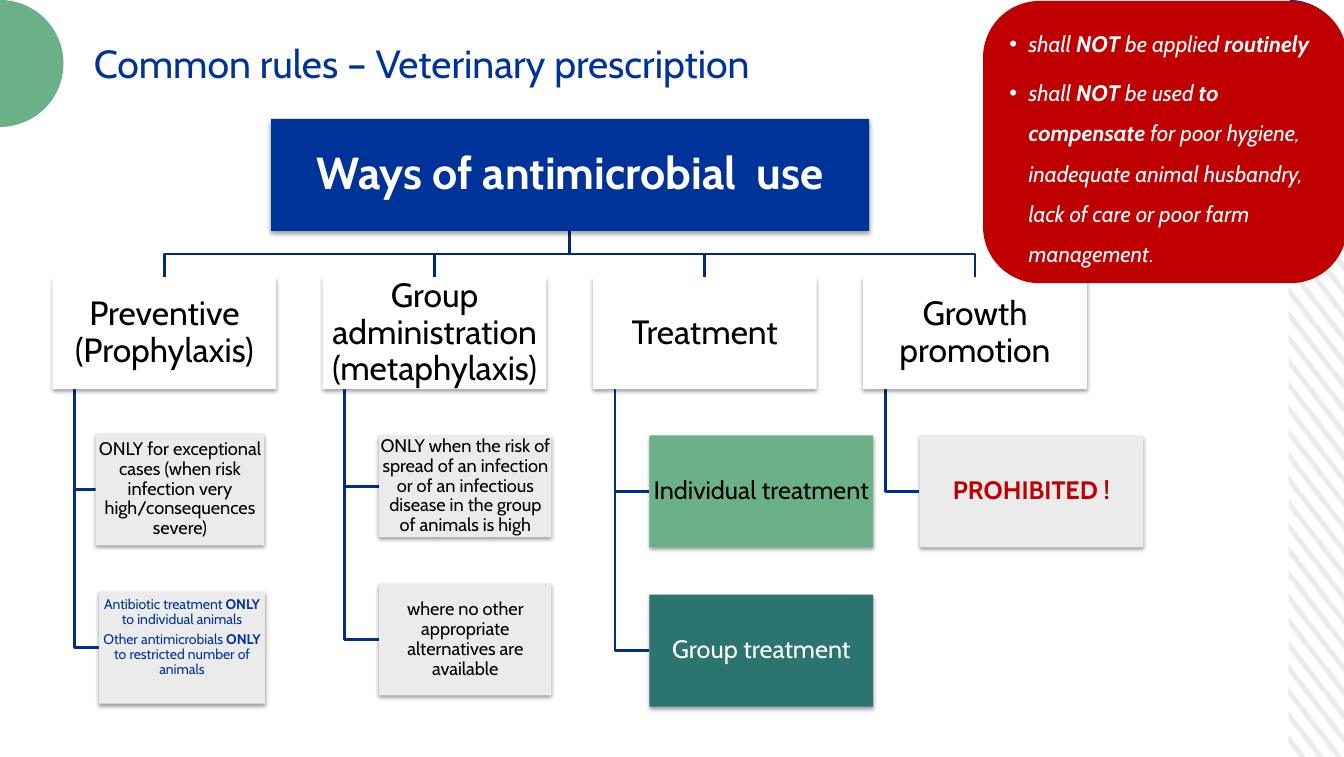
from dataclasses import dataclass
from math import cos, radians, sin

from lxml.etree import SubElement
from pptx import Presentation
from pptx.dml.color import RGBColor
from pptx.enum.shapes import MSO_SHAPE
from pptx.enum.text import MSO_ANCHOR, PP_ALIGN
from pptx.oxml.ns import qn
from pptx.util import Pt

PX = 9144  # EMU; 100 px to the inch
WIDTH, HEIGHT = 1333, 751


@dataclass(frozen=True)
class Theme:
    font: str = "Cabin"
    bullet_font: str = "Arial"
    blue: str = "003399"
    bus: str = "00297B"
    branch: str = "002E8B"
    green: str = "6BB188"
    teal: str = "2C7470"
    red: str = "C00000"
    grey: str = "ECEBEB"
    white: str = "FFFFFF"
    black: str = "000000"
    title: int = 28
    root: int = 32
    head: int = 24
    body: int = 18
    panel: int = 16
    note: int = 13
    small: int = 10


T = Theme()

# Each child: left and top from its column, width, height, text, format
COLUMNS = [
    ("Preventive (Prophylaxis)", [
        (43, 155, 167, 111, ["ONLY for exceptional cases (when risk infection very "
                             "high/consequences severe)"], dict(size=T.note)),
        (46, 312, 165, 111, [
            [("Antibiotic treatment ", ""), ("ONLY", "b"), (" to individual animals", "")],
            [("Other antimicrobials ", ""), ("ONLY", "b"),
             (" to restricted number of animals", "")],
        ], dict(size=T.small, color=T.blue, bottom=21)),
    ]),
    ("Group administration (metaphylaxis)", [
        (56, 157, 171, 101, ["ONLY when the risk of spread of an infection or of an "
                             "infectious disease in the group of animals is high"],
         dict(size=T.note)),
        (56, 304, 171, 111, ["where no other appropriate alternatives are available"],
         dict(size=T.note)),
    ]),
    ("Treatment", [
        (56, 157, 222, 111, ["Individual treatment"], dict(fill=T.green)),
        (56, 315, 222, 111, ["Group treatment"], dict(fill=T.teal, color=T.white)),
    ]),
    ("Growth promotion", [
        (56, 157, 222, 111, [[("PROHIBITED !", "b")]], dict(color=T.red)),
    ]),
]

LIMITS = [
    [("shall ", "i"), ("NOT", "bi"), (" be applied ", "i"), ("routinely", "bi")],
    [("shall ", "i"), ("NOT", "bi"), (" be used", "i"), (" to compensate ", "bi"),
     ("for poor hygiene, inadequate animal husbandry, lack of care or poor farm "
      "management", "i"), (".", "")],
]


def write(tf, paragraphs, size, color=T.black, align=PP_ALIGN.CENTER,
          spacing=0.9, after=0, bullet=None):
    """Each paragraph is a string or a list of (text, style), style from "b" and "i"."""
    tf.word_wrap = True
    tf.vertical_anchor = MSO_ANCHOR.MIDDLE
    for i, runs in enumerate(paragraphs):
        p = tf.add_paragraph() if i else tf.paragraphs[0]
        p.alignment, p.line_spacing, p.space_after = align, spacing, Pt(after)
        if bullet:
            pPr = p._p.get_or_add_pPr()
            pPr.set("marL", str(19 * PX))
            pPr.set("indent", str(-19 * PX))
            SubElement(pPr, qn("a:buFont")).set("typeface", T.bullet_font)
            SubElement(pPr, qn("a:buChar")).set("char", bullet)
        for words, style in [(runs, "")] if isinstance(runs, str) else runs:
            r = p.add_run()
            r.text = words
            r.font.name, r.font.size = T.font, Pt(size)
            r.font.color.rgb = RGBColor.from_string(color)
            r.font.bold, r.font.italic = "b" in style, "i" in style


def paint(sp, fill):
    sp.fill.solid()
    sp.fill.fore_color.rgb = RGBColor.from_string(fill)
    sp.line.fill.background()
    sp.shadow.inherit = False


def block(s, box, fill, kind=MSO_SHAPE.RECTANGLE):
    sp = s.shapes.add_shape(kind, *(v * PX for v in box))
    paint(sp, fill)
    return sp


def card(s, box, paragraphs, size=T.body, color=T.black, fill=T.grey, inset=1, bottom=None):
    sp = block(s, box, fill)
    effects = sp._element.spPr.find(qn("a:effectLst"))
    shadow = SubElement(effects, qn("a:outerShdw"), blurRad=str(Pt(3.1)),
                        dist=str(Pt(1.6)), dir="5400000", rotWithShape="0")
    tint = SubElement(shadow, qn("a:srgbClr"), val=T.black)
    SubElement(tint, qn("a:alpha"), val="38000")
    tf = sp.text_frame
    tf.margin_left = tf.margin_right = tf.margin_top = inset * PX
    tf.margin_bottom = (bottom or inset) * PX
    write(tf, paragraphs, size, color, after=size * 0.35)


def outline(s, contours, close=True):
    contours = [[(round(x * PX), round(y * PX)) for x, y in points] for points in contours]
    fb = s.shapes.build_freeform(*contours[0][0])
    for i, (start, *rest) in enumerate(contours):
        if i:
            fb.move_to(*start)
        fb.add_line_segments(rest, close=close)
    return fb.convert_to_shape()


def elbow(s, points, color):
    sp = outline(s, [points], close=False)
    sp.fill.background()
    sp.line.color.rgb = RGBColor.from_string(color)
    sp.line.width = Pt(2)
    sp.shadow.inherit = False


def sector(s, cx, cy, radius, start, end, fill):
    arc = [(cx + radius * cos(radians(a)), cy + radius * sin(radians(a)))
           for a in range(start, end + 1, 3)]
    paint(outline(s, [[(cx, cy)] + arc]), fill)


def stripes(s, box):
    left, top, width, height = box
    slope, pitch, thick, count = 71 / 55, 23.4, 8, 28

    def edge(y):
        """Ends of the slanted edge from y at the left side, cut to the box."""
        xs = max(0, (top - y) / slope), min(width, (top + height - y) / slope)
        return [(left + x, y + slope * x) for x in xs]

    first = top - 57
    tops = [first + pitch * i for i in range(count)]
    paint(outline(s, [edge(y) + edge(y + thick)[::-1] for y in tops]), T.grey)


def heading(s, box):
    sp = s.shapes.title
    sp.left, sp.top, sp.width, sp.height = (v * PX for v in box)
    write(sp.text_frame, ["Common rules – Veterinary prescription"], T.title, T.blue,
          PP_ALIGN.LEFT, spacing=1)


def use_tree(s, box):
    left, top, width, _ = box
    head_w, head_h, root_w, spine = 222, 111, 593, 22
    pitch = (width - head_w) // (len(COLUMNS) - 1)
    middle, row, bus = left + width // 2, top + 157, top + 134
    columns = [(left + pitch * i, *column) for i, column in enumerate(COLUMNS)]

    for x, _, children in reversed(columns):
        for dx, dy, _, h, _, _ in reversed(children):
            y = row + dy + h / 2
            elbow(s, [(x + spine, row + head_h), (x + spine, y), (x + dx, y)], T.branch)
        centre = x + head_w // 2
        elbow(s, [(middle, top + head_h), (middle, bus), (centre, bus), (centre, row)], T.bus)

    card(s, (middle - root_w // 2, top, root_w, head_h),
         [[("Ways of antimicrobial  use", "b")]], T.root, T.white, T.blue, inset=2)
    for x, name, children in columns:
        card(s, (x, row, head_w, head_h), [name], T.head, fill=T.white, inset=2)
        for dx, dy, w, h, words, look in children:
            card(s, (x + dx, row + dy, w, h), words, **look)


def limits_panel(s, box):
    sp = block(s, box, T.red, MSO_SHAPE.ROUNDED_RECTANGLE)
    sp.adjustments[0] = 0.2
    write(sp.text_frame, LIMITS, T.panel, T.white, PP_ALIGN.LEFT, 1.5, 6, "•")


def main():
    prs = Presentation()
    prs.slide_width, prs.slide_height = WIDTH * PX, HEIGHT * PX
    s = prs.slides.add_slide(prs.slide_layouts[5])
    stripes(s, (1278, 154, 55, HEIGHT - 154))
    sector(s, 1279, 54, 54, -90, 0, T.blue)
    sector(s, 0, 63, 63, -90, 90, T.green)
    heading(s, (83, 33, 876, 58))
    use_tree(s, (52, 118, 1026, 583))
    limits_panel(s, (975, 1, 361, 280))
    prs.save("out.pptx")


if __name__ == "__main__":
    main()
